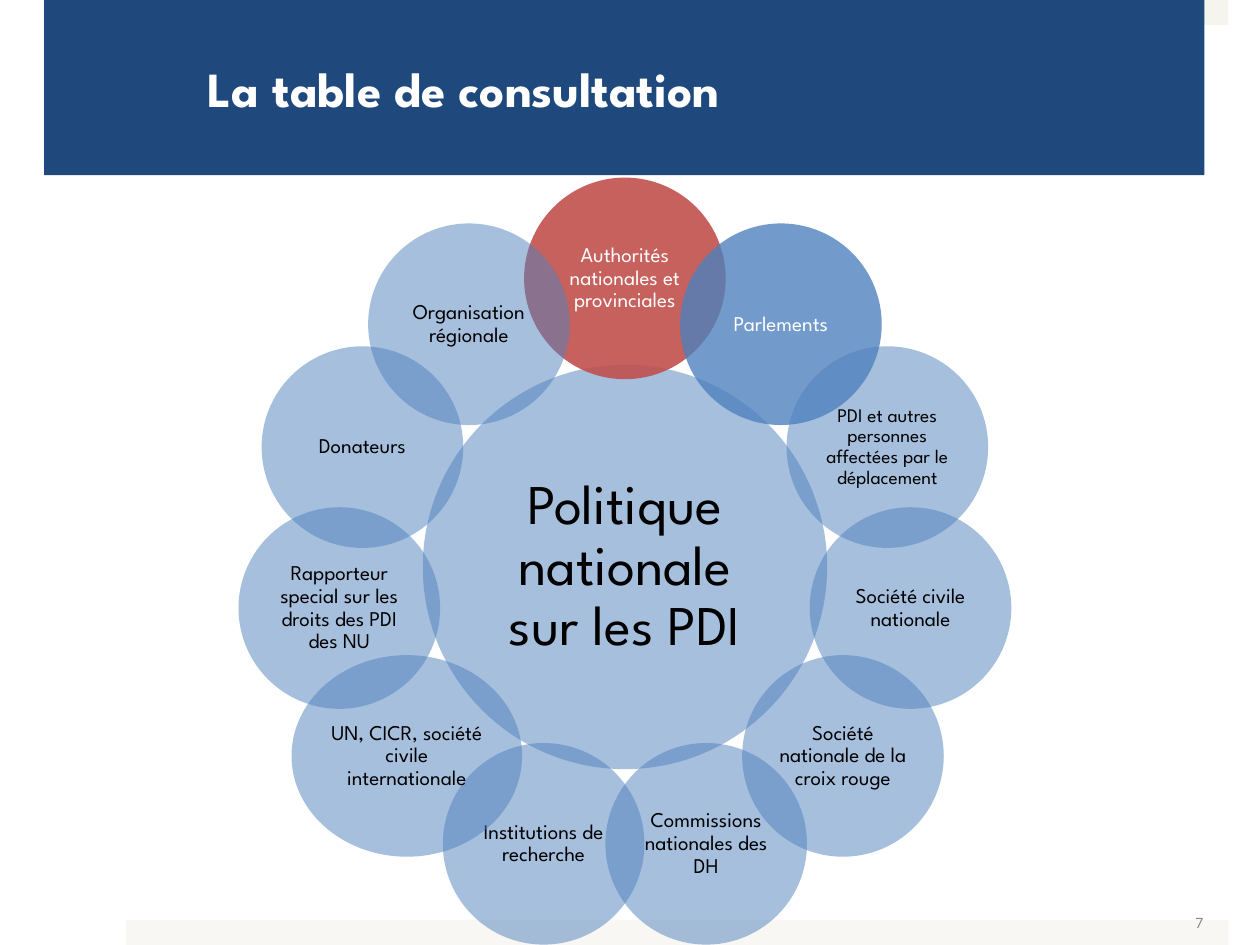
import math

from lxml import etree
from pptx import Presentation
from pptx.dml.color import RGBColor
from pptx.enum.shapes import MSO_SHAPE
from pptx.enum.text import MSO_ANCHOR, MSO_AUTO_SIZE, PP_ALIGN
from pptx.oxml.ns import qn
from pptx.util import Inches, Pt

RECTANGLE, OVAL = MSO_SHAPE.RECTANGLE, MSO_SHAPE.OVAL
MIDDLE = MSO_ANCHOR.MIDDLE
LEFT, CENTER, RIGHT = PP_ALIGN.LEFT, PP_ALIGN.CENTER, PP_ALIGN.RIGHT
NO_AUTOFIT = MSO_AUTO_SIZE.NONE
FONT = "League Spartan"
BLUE, RED, BLACK, WHITE = "4F81BD", "C0504D", "000000", "FFFFFF"


def write(shape, text, size, color, align, insets, font=FONT, bold=False):
    frame = shape.text_frame
    frame.text = text
    frame.word_wrap = True
    frame.auto_size = NO_AUTOFIT
    frame.vertical_anchor = MIDDLE
    frame.margin_left, frame.margin_top, frame.margin_right, frame.margin_bottom = [
        Inches(inset) for inset in insets]
    paragraph = frame.paragraphs[0]
    paragraph.alignment = align
    run_font = paragraph.runs[0].font
    run_font.name, run_font.size, run_font.bold = font, Pt(size), bold
    run_font.color.rgb = RGBColor.from_string(color)
    return paragraph


def add_filled(kind, left, top, width, height, color, opacity=100):
    shape = slide.shapes.add_shape(
        kind, Inches(left), Inches(top), Inches(width), Inches(height))
    shape.shadow.inherit = False
    shape.line.fill.background()
    shape.fill.solid()
    shape.fill.fore_color.rgb = RGBColor.from_string(color)
    if opacity < 100:
        fill_color = shape._element.spPr.find(qn("a:solidFill"))[0]
        etree.SubElement(fill_color, qn("a:alpha")).set("val", str(opacity * 1000))
    return shape


prs = Presentation()
prs.slide_width, prs.slide_height = Inches(10), Inches(7.5)
slide = prs.slides.add_slide(prs.slide_layouts[5])

add_filled(RECTANGLE, 1, 0, 8.75, 0.2, "F5F4ED")
add_filled(RECTANGLE, 1, 7.3, 8.75, 0.2, "F8F7F3")

page_number = slide.shapes.add_textbox(
    Inches(7.29), Inches(7.12), Inches(2.33), Inches(0.4))
write(page_number, "7", 9, "898989", RIGHT, (0.07, 0.04, 0.07, 0.04), "Calibri")

title = slide.shapes.title
slide.shapes._spTree.append(title._element)
title.left, title.top = Inches(0.35), Inches(0)
title.width, title.height = Inches(9.21), Inches(1.39)
title.fill.solid()
title.fill.fore_color.rgb = RGBColor.from_string("1F497D")
write(title, "La table de consultation", 28, WHITE, LEFT,
      (1.3, 0.05, 0.3, 0.05), bold=True)

center_x, center_y = 4.96, 4.5
hub_size, petal_size, orbit = 3.21, 1.6, 2.29

hub = add_filled(OVAL, center_x - hub_size / 2, center_y - hub_size / 2,
                 hub_size, hub_size, BLUE, 50)
write(hub, "Politique nationale sur les PDI", 32, BLACK, CENTER,
      [0.04] * 4).line_spacing = 0.9

pale = (BLUE, 50, BLACK)
petals = [
    ("Authorités nationales et provinciales", 12, petal_size, (RED, 90, WHITE)),
    ("Parlements", 12, petal_size, (BLUE, 80, WHITE)),
    ("PDI et autres personnes affectées par le déplacement", 11, petal_size, pale),
    ("Société civile nationale", 12, petal_size, pale),
    ("Société nationale de la croix rouge", 12, petal_size, pale),
    ("Commissions nationales des DH", 12, petal_size, pale),
    ("Institutions de recherche", 12, petal_size, pale),
    ("UN, CICR, société civile internationale", 12, 1.83, pale),
    ("Rapporteur special sur les droits des PDI des NU", 12, petal_size, pale),
    ("Donateurs", 12, petal_size, pale),
    ("Organisation régionale", 12, petal_size, pale),
]
for index, (label, size, width, (color, opacity, text_color)) in enumerate(petals):
    angle = 2 * math.pi * index / len(petals)
    x = center_x + orbit * math.sin(angle)
    y = center_y - orbit * math.cos(angle)
    petal = add_filled(OVAL, x - width / 2, y - petal_size / 2,
                       width, petal_size, color, opacity)
    write(petal, label, size, text_color, CENTER, [0.02] * 4).line_spacing = 0.9

prs.save("out.pptx")
